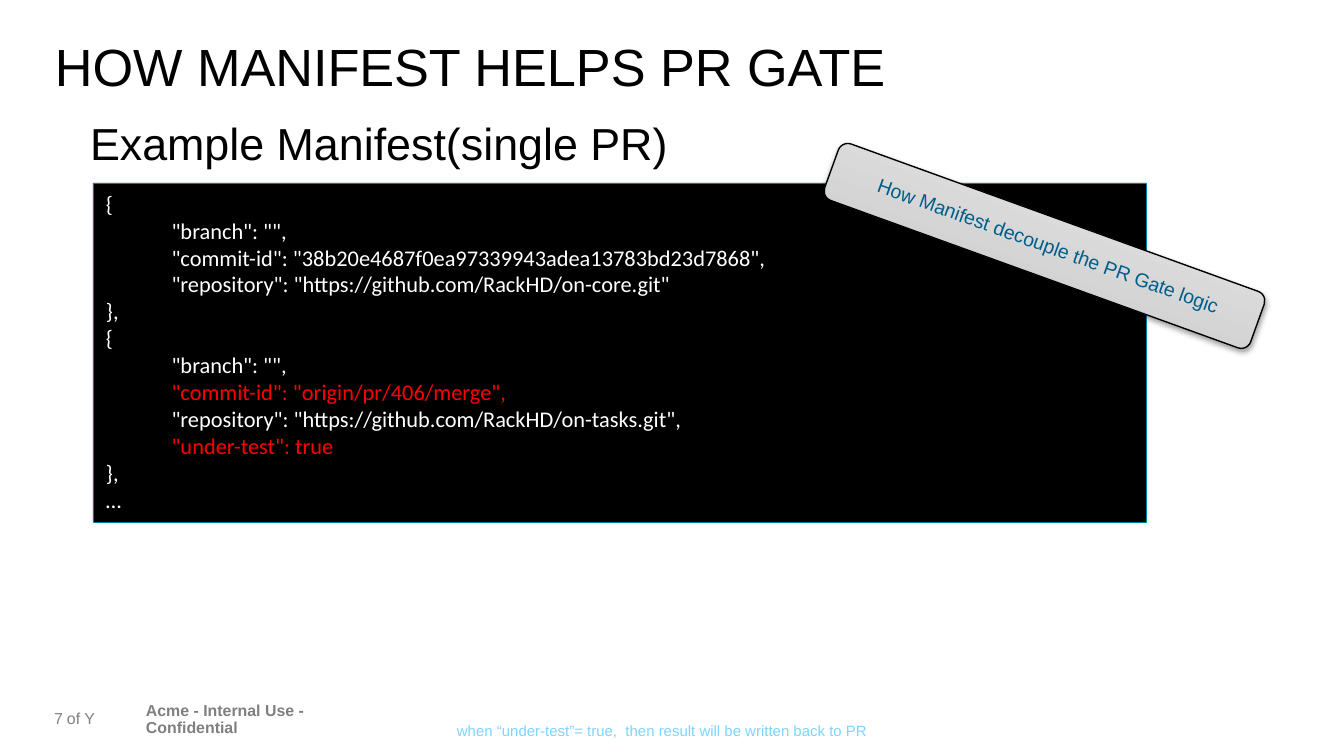
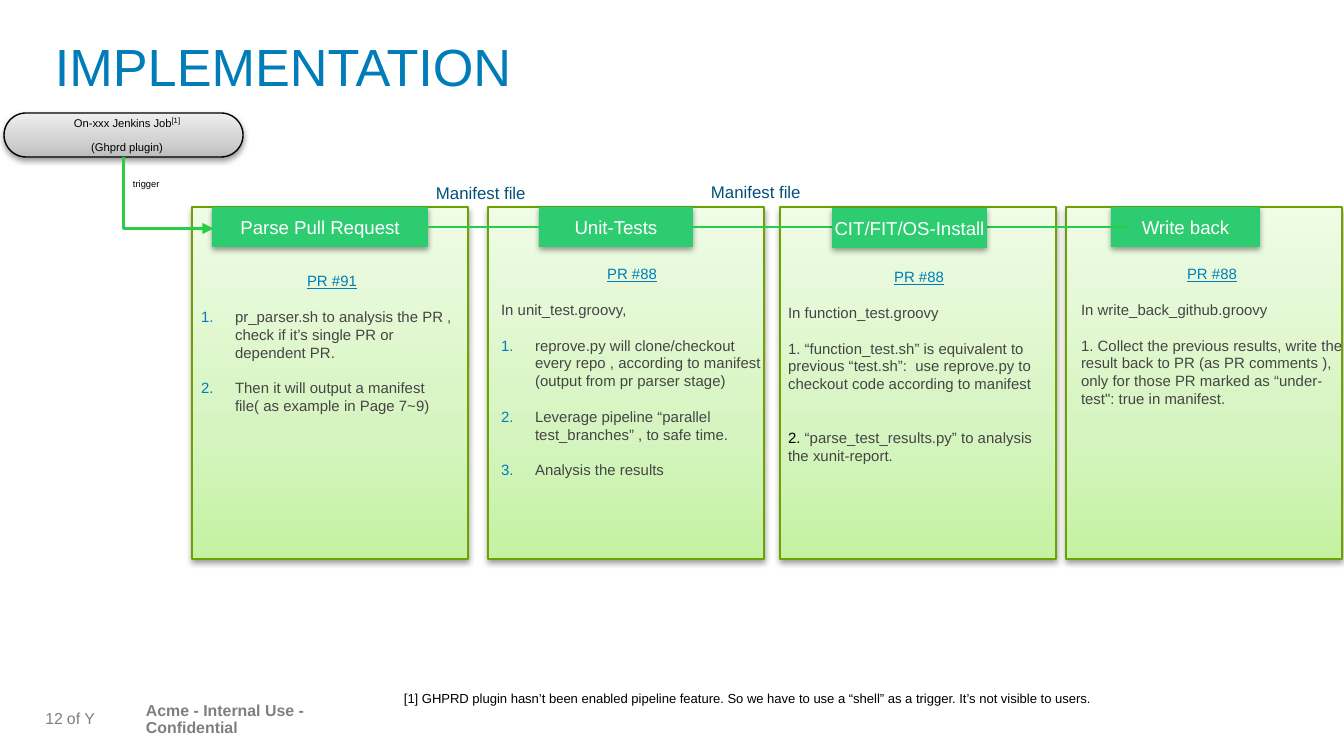
import lxml.etree
import pptx
import pptx.dml.color
import pptx.enum.shapes
import pptx.enum.text
import pptx.oxml
import pptx.oxml.ns
import pptx.util

SHAPES = pptx.enum.shapes.MSO_SHAPE
CONNECTORS = pptx.enum.shapes.MSO_CONNECTOR
ALIGN = pptx.enum.text.PP_ALIGN
ANCHOR = pptx.enum.text.MSO_ANCHOR
PX = 914400 / 134.4

BLACK, WHITE, RED = "000000", "FFFFFF", "FF0000"
BLUE, DARK_BLUE, NAVY, SKY = "007DB8", "005E8A", "005178", "7DD5FF"
GREY, FOOTER_GREY, NUMBER_GREY = "444444", "7F7F7F", "808080"
EMERALD, ARROW_GREEN, OLIVE = "2ECC71", "27CD47", "6DA200"
SILVER_STOPS = [(0, "BDBDBD"), (35, "D1D1D1"), (100, "EEEEEE")]
LIME_STOPS = [(0, "C4F2A2"), (35, "D5F4BF"), (100, "EFFCE6")]

BLANK_LINE = 9.5
DEFAULT_INSETS = (13, 7, 13, 7)
NO_INSETS = (0, 0, 0, 0)
BADGE_INSETS = (27, 20, 20, 20)
HEADING_INSETS = (1, 7, 1, 7)

CODE_INDENT = " " * 13
MANIFEST = [
    ("{", WHITE),
    (CODE_INDENT + '"branch": "",', WHITE),
    (CODE_INDENT + '"commit-id": "38b20e4687f0ea97339943adea13783bd23d7868",', WHITE),
    (CODE_INDENT + '"repository": "https://github.com/RackHD/on-core.git"', WHITE),
    ("},", WHITE),
    ("{", WHITE),
    (CODE_INDENT + '"branch": "",', WHITE),
    (CODE_INDENT + '"commit-id": "origin/pr/406/merge",', RED),
    (CODE_INDENT + '"repository": "https://github.com/RackHD/on-tasks.git",', WHITE),
    (CODE_INDENT + '"under-test": true', RED),
    ("},", WHITE),
    ("…", WHITE),
]


def px(value):
    return pptx.util.Emu(round(value * PX))


def color(value):
    return pptx.dml.color.RGBColor.from_string(value)


def xml(tag, content="", attributes=""):
    namespace = pptx.oxml.ns.nsdecls("a")
    return pptx.oxml.parse_xml(f"<a:{tag} {namespace} {attributes}>{content}</a:{tag}>")


def set_all(target, values):
    for name, value in values.items():
        setattr(target, name, value)


def run(text, size, tint, raised=False, **formats):
    font = {"name": "Arial", "size": pptx.util.Pt(size), **formats}
    return text, tint, raised, font


def paragraph(*runs, numbered=False, **formats):
    return runs, numbered, formats


def number(para):
    properties = para._p.get_or_add_pPr()
    properties.set("marL", str(px(34)))
    properties.set("indent", str(-px(34)))
    properties.append(xml("buClr", f'<a:srgbClr val="{BLUE}"/>'))
    properties.append(xml("buFont", attributes='typeface="+mj-lt"'))
    properties.append(xml("buAutoNum", attributes='type="arabicPeriod"'))


def write(shape, paragraphs, insets=DEFAULT_INSETS, anchor=ANCHOR.TOP, wrap=True):
    frame = shape.text_frame
    sides = ("margin_left", "margin_top", "margin_right", "margin_bottom")
    set_all(frame, dict(zip(sides, map(px, insets))))
    set_all(frame, {"word_wrap": wrap, "vertical_anchor": anchor})
    for index, (runs, numbered, formats) in enumerate(paragraphs):
        para = frame.add_paragraph() if index else frame.paragraphs[0]
        if numbered:
            number(para)
        set_all(para, {"alignment": ALIGN.LEFT, **formats})
        for text, tint, raised, font in runs:
            span = para.add_run()
            span.text = text
            set_all(span.font, font)
            span.font.color.rgb = color(tint)
            if raised:
                span._r.get_or_add_rPr().set("baseline", "30000")


def add_text(page, bounds, paragraphs, **layout):
    box = page.shapes.add_textbox(*map(px, bounds))
    write(box, paragraphs, **layout)


def add_box(page, bounds, fill, line=None, width=0.75, kind=SHAPES.RECTANGLE, shadow=True):
    box = page.shapes.add_shape(kind, *map(px, bounds))
    box.shadow.inherit = False
    properties = box._element.spPr
    if isinstance(fill, str):
        box.fill.solid()
        box.fill.fore_color.rgb = color(fill)
    else:
        stops = "".join(
            f'<a:gs pos="{place * 1000}"><a:srgbClr val="{tint}"/></a:gs>' for place, tint in fill
        )
        gradient = f'<a:gsLst>{stops}</a:gsLst><a:lin ang="16200000" scaled="0"/>'
        geometry = properties.find(pptx.oxml.ns.qn("a:prstGeom"))
        geometry.addnext(xml("gradFill", gradient, 'rotWithShape="1"'))
    if line:
        box.line.color.rgb = color(line)
        box.line.width = pptx.util.Pt(width)
    else:
        box.line.fill.background()
    if shadow:
        effects = properties.find(pptx.oxml.ns.qn("a:effectLst"))
        tint = f'<a:srgbClr val="{BLACK}"><a:alpha val="38000"/></a:srgbClr>'
        effects.append(
            xml("outerShdw", tint, 'blurRad="40000" dist="20000" dir="5400000" rotWithShape="0"')
        )
    return box


def add_line(page, start, end, kind=CONNECTORS.STRAIGHT):
    line = page.shapes.add_connector(kind, *map(px, start + end))
    line.line.color.rgb = color(ARROW_GREEN)
    line.line.width = pptx.util.Pt(1.25)
    line._element.spPr.append(xml("effectLst"))
    return line


def add_trigger_arrow(page):
    arrow = add_line(page, (133, 148), (204, 238), CONNECTORS.ELBOW)
    properties = arrow._element.spPr
    properties.find(pptx.oxml.ns.qn("a:prstGeom")).set("prst", "bentConnector2")
    transform = properties.find(pptx.oxml.ns.qn("a:xfrm"))
    transform.set("rot", "16200000")
    transform.set("flipH", "1")
    properties.find(pptx.oxml.ns.qn("a:ln")).append(xml("tailEnd", attributes='type="triangle"'))


def add_heading(page, left, top, width, label):
    box = add_box(page, (left, top, width, 40), EMERALD)
    words = paragraph(run(label, 10, WHITE), alignment=ALIGN.CENTER)
    write(box, [words], insets=HEADING_INSETS, anchor=ANCHOR.MIDDLE)


def note(text, numbered=False, blank_lines=1):
    gap = pptx.util.Pt(BLANK_LINE * blank_lines)
    return paragraph(run(text, 8, GREY), numbered=numbered, space_before=gap)


def add_notes(page, bounds, request, notes):
    link = paragraph(run(request, 8, BLUE, underline=True), alignment=ALIGN.CENTER)
    add_text(page, bounds, [link] + notes)


def add_page(deck, title, tint, page_number):
    page = deck.slides.add_slide(deck.slide_layouts[6])
    footers = [
        ((146, 711, 242, 17), "Acme - Internal Use - Confidential", FOOTER_GREY, True, ALIGN.LEFT),
        ((43, 711, 20, 17), page_number, NUMBER_GREY, False, ALIGN.RIGHT),
        ((67, 711, 28, 17), "of Y", NUMBER_GREY, False, ALIGN.LEFT),
    ]
    for bounds, text, shade, bold, side in footers:
        words = paragraph(run(text, 8.5, shade, bold=bold), alignment=side, line_spacing=0.9)
        add_text(page, bounds, [words], insets=NO_INSETS, anchor=ANCHOR.MIDDLE, wrap=False)
    add_text(page, (55, 34, 1243, 63), [paragraph(run(title, 28, tint))], insets=NO_INSETS)
    return page


def build_manifest_page(deck):
    page = add_page(deck, "HOW MANIFEST HELPS PR GATE", BLACK, "7")
    subtitle = paragraph(run("Example Manifest(single PR)", 24, BLACK))
    add_text(page, (90, 116, 1209, 67), [subtitle], insets=NO_INSETS)

    listing = add_box(page, (93, 183, 1053, 339), BLACK, BLUE, 0.25, shadow=False)
    write(listing, [paragraph(run(text, 12, tint, name="Calibri")) for text, tint in MANIFEST])

    remark = "when “under-test”= true,  then result will be written back to PR"
    add_text(page, (444, 715, 621, 32), [paragraph(run(remark, 8, SKY))])

    badge = add_box(
        page, (818, 216, 453, 60), SILVER_STOPS, BLACK, kind=SHAPES.ROUNDED_RECTANGLE
    )
    badge.rotation = 19.9
    words = run("How Manifest decouple the PR Gate logic", 10.5, DARK_BLUE)
    slogan = paragraph(words, alignment=ALIGN.CENTER, line_spacing=0.9)
    write(badge, [slogan], insets=BADGE_INSETS, anchor=ANCHOR.MIDDLE)


def add_job(page):
    job = add_box(page, (4, 113, 239, 44), SILVER_STOPS, BLACK, kind=SHAPES.ROUNDED_RECTANGLE)
    job.adjustments[0] = 0.5
    centred = {"alignment": ALIGN.CENTER, "line_spacing": 0.9}
    name = paragraph(
        run("On-xxx Jenkins Job", 6, BLACK), run("[1]", 7, BLACK, raised=True), **centred
    )
    plugin = paragraph(
        run("(Ghprd plugin)", 6, BLACK), space_before=pptx.util.Pt(6), **centred
    )
    write(job, [name, plugin], insets=BADGE_INSETS, anchor=ANCHOR.MIDDLE)


def build_implementation_page(deck):
    page = add_page(deck, "IMPLEMENTATION", BLUE, "12")
    for left in (1066, 780, 488, 192):
        add_box(page, (left, 207, 276, 352), LIME_STOPS, OLIVE)

    add_heading(page, 1111, 207, 149, "Write back")
    add_heading(page, 212, 207, 216, "Parse Pull Request")
    add_heading(page, 539, 207, 154, "Unit-Tests")
    for start, end in ((428, 539), (692, 844), (982, 1128)):
        add_line(page, (start, 227), (end, 227))
    add_heading(page, 832, 208, 155, "CIT/FIT/OS-Install")

    for left, top in ((423, 176), (698, 175)):
        add_text(page, (left, top, 129, 34), [paragraph(run("Manifest file", 9, NAVY))])

    add_job(page)
    add_trigger_arrow(page)
    add_text(page, (120, 173, 87, 26), [paragraph(run("trigger", 5, BLACK))])
    footnote = (
        "[1] GHPRD plugin hasn’t been enabled pipeline feature. So we have to use a “shell” "
        "as a trigger. It’s not visible to users."
    )
    add_text(page, (391, 683, 1001, 30), [paragraph(run(footnote, 7, BLACK))])

    add_notes(page, (188, 265, 288, 212), "PR #91", [
        note("pr_parser.sh to analysis the PR , check if it’s single PR or dependent PR.", True),
        note("Then it will output a manifest file( as example in Page 7~9)", True),
    ])
    add_notes(page, (488, 258, 288, 358), "PR #88", [
        note("In unit_test.groovy,"),
        note("reprove.py will clone/checkout every repo , according to manifest "
             "(output from pr parser stage)", True),
        note("Leverage pipeline “parallel test_branches” , to safe time.", True),
        note("Analysis the results", True),
    ])
    add_notes(page, (775, 261, 288, 249), "PR #88", [
        note("In function_test.groovy"),
        note("1. “function_test.sh” is equivalent to previous “test.sh”:  use reprove.py to "
             "checkout code according to manifest"),
        paragraph(
            run("2. ", 8, BLACK),
            run("“parse_test_results.py” to analysis the xunit-report.", 8, GREY),
            space_before=pptx.util.Pt(2 * BLANK_LINE),
        ),
    ])
    add_notes(page, (1068, 258, 288, 231), "PR #88", [
        note("In write_back_github.groovy"),
        note("1. Collect the previous results, write the result back to PR (as PR comments ), "
             "only for those PR marked as “under-test\": true in manifest."),
    ])


def main():
    deck = pptx.Presentation()
    deck.slide_width = px(1344)
    deck.slide_height = px(756)
    build_manifest_page(deck)
    build_implementation_page(deck)
    deck.save("out.pptx")


if __name__ == "__main__":
    main()
